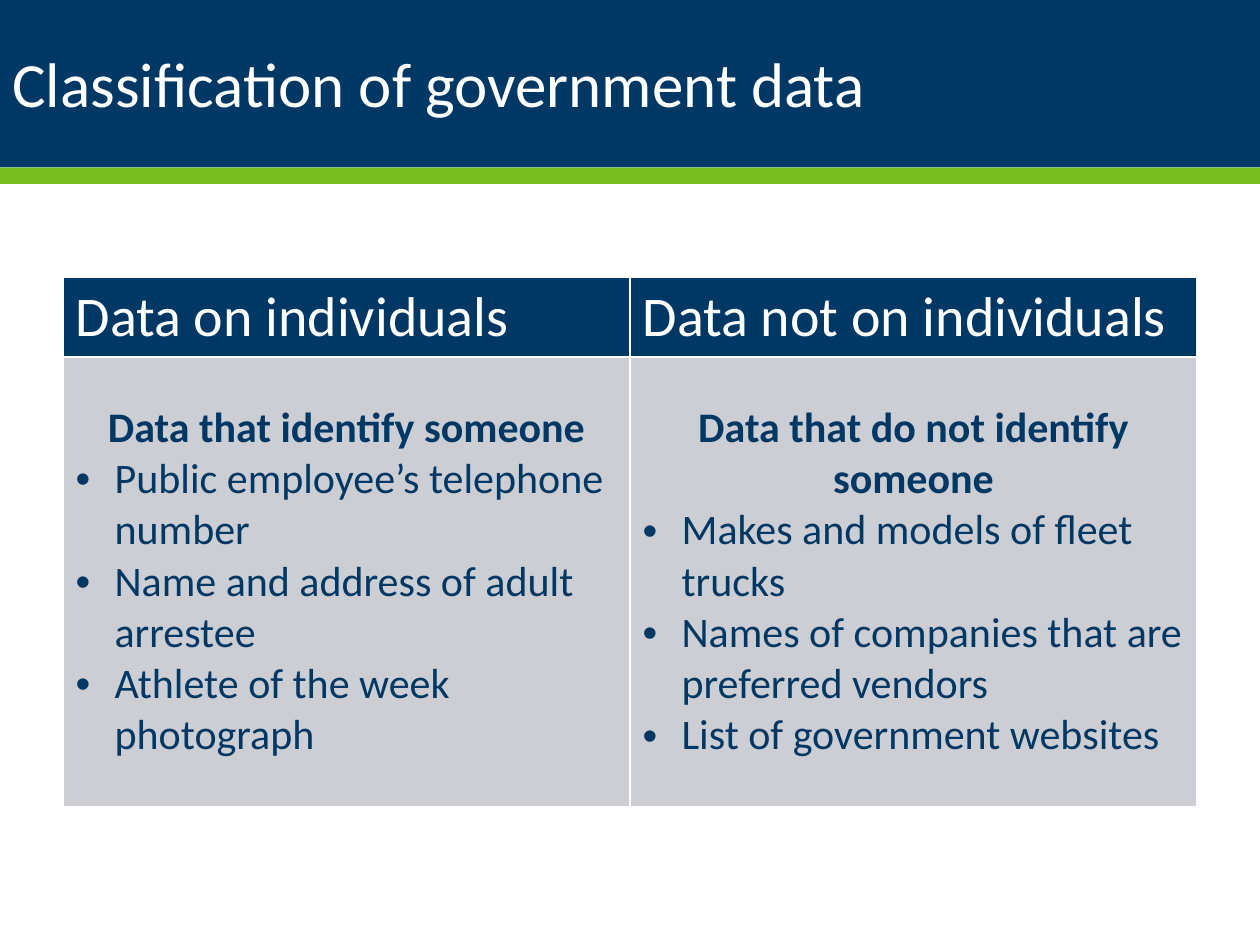
from dataclasses import dataclass

from lxml.etree import SubElement
from pptx import Presentation
from pptx.dml.color import RGBColor
from pptx.enum.shapes import MSO_SHAPE as Shape
from pptx.enum.text import MSO_ANCHOR as Anchor, PP_ALIGN as Align
from pptx.oxml.ns import qn
from pptx.util import Inches, Pt


@dataclass(frozen=True)
class Theme:
    """Colours, font and type sizes of the slide."""
    navy: str = "003865"
    green: str = "78BE21"
    grey: str = "CCCED3"
    white: str = "FFFFFF"
    font: str = "Calibri"
    title: int = 36
    heading: int = 32
    body: int = 24


THEME = Theme()
COLUMNS = [
    ("Data on individuals", "Data that identify someone", [
        "Public employee’s telephone number",
        "Name and address of adult arrestee",
        "Athlete of the week photograph",
    ]),
    ("Data not on individuals", "Data that do not identify someone", [
        "Makes and models of fleet trucks",
        "Names of companies that are preferred vendors",
        "List of government websites",
    ]),
]


def paint(fill, color):
    """Give a fill one solid colour."""
    fill.solid()
    fill.fore_color.rgb = RGBColor.from_string(color)


def write(para, text, *, size=THEME.body, color=THEME.navy, bold=False,
          align=Align.LEFT, bullet=False):
    """Write one formatted paragraph."""
    para.alignment = align
    span = para.add_run()
    span.text = text
    span.font.name = THEME.font
    span.font.size = Pt(size)
    span.font.bold = bold
    span.font.color.rgb = RGBColor.from_string(color)
    if bullet:
        properties = para._p.get_or_add_pPr()
        properties.set("marL", str(Inches(0.31)))
        properties.set("indent", str(-Inches(0.31)))
        SubElement(properties, qn("a:buFont"), typeface="Arial")
        SubElement(properties, qn("a:buChar"), char="•")


def add_band(page, top, height, color):
    """Add a full-width band."""
    band = page.shapes.add_shape(
        Shape.RECTANGLE, 0, Inches(top), Inches(10), Inches(height))
    band.shadow.inherit = False
    paint(band.fill, color)
    band.line.fill.background()


def add_title(page, text):
    """Add the slide title over the navy band."""
    box = page.shapes.add_textbox(0, Inches(0.16), Inches(9.29), Inches(1.07))
    frame = box.text_frame
    frame.word_wrap = True
    frame.vertical_anchor = Anchor.MIDDLE
    para = frame.paragraphs[0]
    para.line_spacing = 0.9
    write(para, text, size=THEME.title, color=THEME.white)


def style_cell(cell, color):
    """Give a cell thin white borders and a fill."""
    properties = cell._tc.get_or_add_tcPr()
    for side in "LRTB":
        line = SubElement(properties, qn(f"a:ln{side}"), w=str(Pt(1)))
        solid = SubElement(line, qn("a:solidFill"))
        SubElement(solid, qn("a:srgbClr"), val=THEME.white)
    paint(cell.fill, color)


def add_comparison(page):
    """Add the table that compares the kinds of data."""
    table = page.shapes.add_table(
        2, len(COLUMNS), Inches(0.5), Inches(2.2), Inches(9), Inches(4.2)).table
    table.rows[0].height = Inches(0.59)
    table.rows[1].height = Inches(3.57)
    for index, (heading, summary, examples) in enumerate(COLUMNS):
        head, body = table.cell(0, index), table.cell(1, index)
        style_cell(head, THEME.navy)
        style_cell(body, THEME.grey)
        write(head.text_frame.paragraphs[0], heading,
              size=THEME.heading, color=THEME.white)
        body.vertical_anchor = Anchor.MIDDLE
        frame = body.text_frame
        write(frame.paragraphs[0], summary, bold=True, align=Align.CENTER)
        for example in examples:
            write(frame.add_paragraph(), example, bullet=True)


def main():
    """Build and save the deck."""
    deck = Presentation()
    deck.slide_width, deck.slide_height = Inches(10), Inches(7.5)
    page = deck.slides.add_slide(deck.slide_layouts[6])
    paint(page.background.fill, THEME.white)
    add_band(page, 0, 1.33, THEME.navy)
    add_band(page, 1.33, 0.13, THEME.green)
    add_title(page, "Classification of government data")
    add_comparison(page)
    deck.save("out.pptx")


if __name__ == "__main__":
    main()
